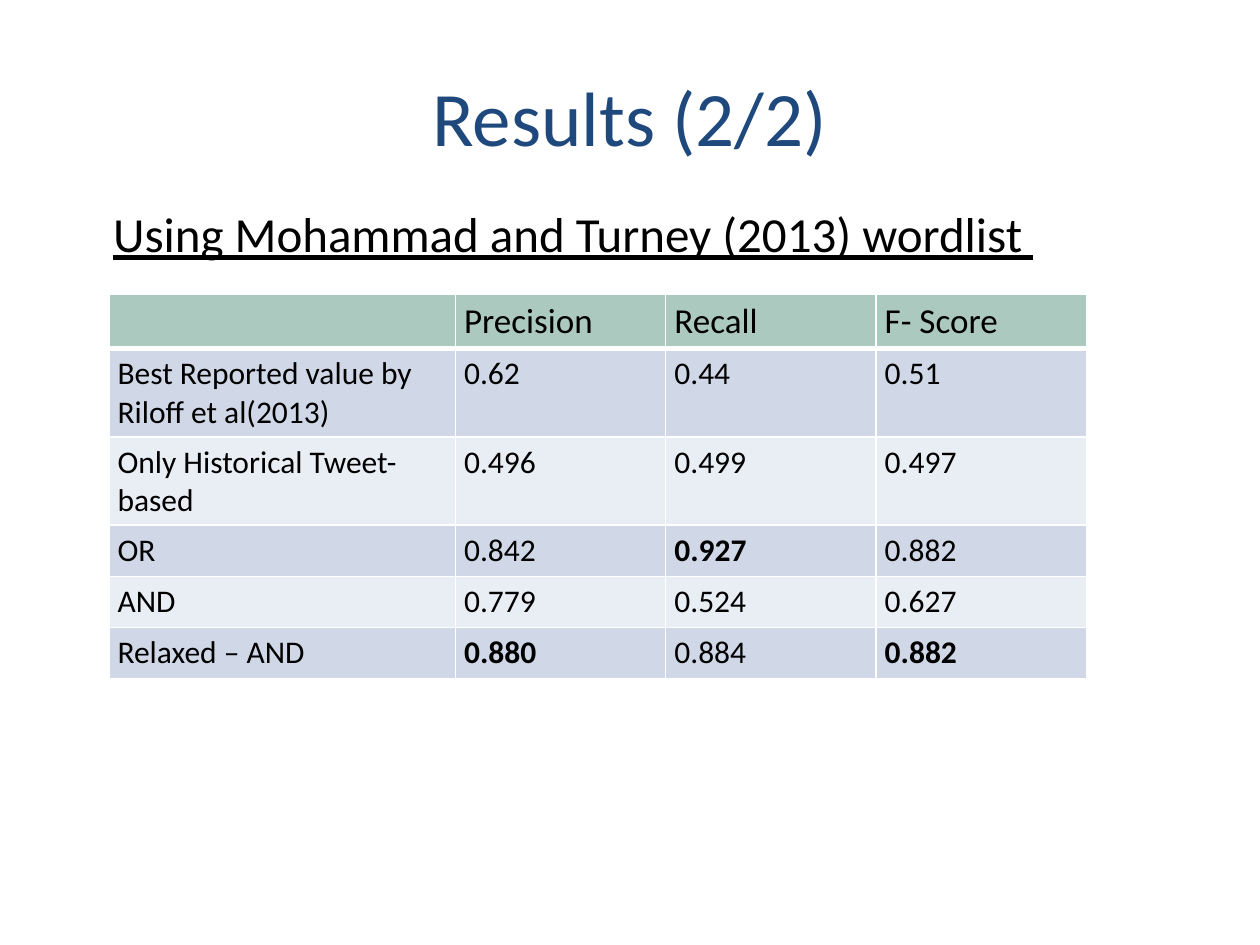
from lxml.etree import SubElement
from pptx import Presentation
from pptx.dml.color import RGBColor as RGB
from pptx.enum.text import PP_ALIGN as ALIGN
from pptx.oxml.ns import qn
from pptx.util import Pt

FONT = "Calibri"
COLORS = {"title": "1F497D", "text": "000000", "border": "FFFFFF",
          "header": "ABC9BF", "odd": "D0D8E8", "even": "E9EDF4"}
ROWS = [
    ["", "Precision", "Recall", "F- Score"],
    ["Best Reported value by Riloff et al(2013)", "0.62", "0.44", "0.51"],
    ["Only Historical Tweet-based", "0.496", "0.499", "0.497"],
    ["OR", "0.842", "0.927", "0.882"],
    ["AND", "0.779", "0.524", "0.627"],
    ["Relaxed – AND", "0.880", "0.884", "0.882"],
]
BEST = {(3, 2), (5, 1), (5, 3)}
COL_WIDTHS = [198, 120.2, 120.2, 120.2]
ROW_HEIGHTS = [30, 50, 50, 29.2, 29.2, 29.2]


def style_text(p, size, color="text", bold=False, underline=False):
    """Format every run of a paragraph."""
    for r in p.runs:
        r.font.name = FONT
        r.font.size = Pt(size)
        r.font.bold = bold
        r.font.underline = underline
        r.font.color.rgb = RGB.from_string(COLORS[color])


def add_line(s, box, text, size, color="text", align=ALIGN.LEFT, underline=False):
    """Add a one-line text box."""
    tf = s.shapes.add_textbox(*map(Pt, box)).text_frame
    tf.word_wrap = True
    tf.text = text
    p = tf.paragraphs[0]
    p.alignment = align
    style_text(p, size, color, underline=underline)


def set_borders(cell, is_header):
    """Draw the four cell borders, with a heavier rule under the header."""
    tc_pr = cell._tc.get_or_add_tcPr()
    for i, side in enumerate(["lnL", "lnR", "lnT", "lnB"]):
        width = Pt(3 if is_header and side == "lnB" else 1)
        ln = SubElement(tc_pr, qn(f"a:{side}"), w=str(width))
        fill = SubElement(ln, qn("a:solidFill"))
        SubElement(fill, qn("a:srgbClr"), val=COLORS["border"])
        tc_pr.insert(i, ln)


def add_results_table(s, left, top):
    """Add the table of scores with its best values in bold."""
    frame = s.shapes.add_table(len(ROWS), len(COL_WIDTHS), Pt(left), Pt(top),
                               Pt(sum(COL_WIDTHS)), Pt(sum(ROW_HEIGHTS)))
    table = frame.table
    for col, width in zip(table.columns, COL_WIDTHS):
        col.width = Pt(width)
    for row, height in zip(table.rows, ROW_HEIGHTS):
        row.height = Pt(height)
    for i, values in enumerate(ROWS):
        band = "header" if i == 0 else "odd" if i % 2 else "even"
        for j, value in enumerate(values):
            cell = table.cell(i, j)
            cell.margin_left = cell.margin_right = Pt(5)
            cell.margin_top = cell.margin_bottom = Pt(3.6)
            cell.fill.solid()
            cell.fill.fore_color.rgb = RGB.from_string(COLORS[band])
            set_borders(cell, i == 0)
            cell.text_frame.text = value
            style_text(cell.text_frame.paragraphs[0], 18 if i else 20,
                       bold=(i, j) in BEST)


def main():
    """Build and save the results slide."""
    prs = Presentation()
    prs.slide_width, prs.slide_height = Pt(720), Pt(540)
    s = prs.slides.add_slide(prs.slide_layouts[6])
    add_line(s, (0, 36, 720, 110), "Results (2/2)", 44, "title", ALIGN.CENTER)
    add_line(s, (57.6, 113, 604.8, 41), "Using Mohammad and Turney (2013) wordlist ",
             28, underline=True)
    add_results_table(s, 62.2, 168)
    prs.save("out.pptx")


if __name__ == "__main__":
    main()
